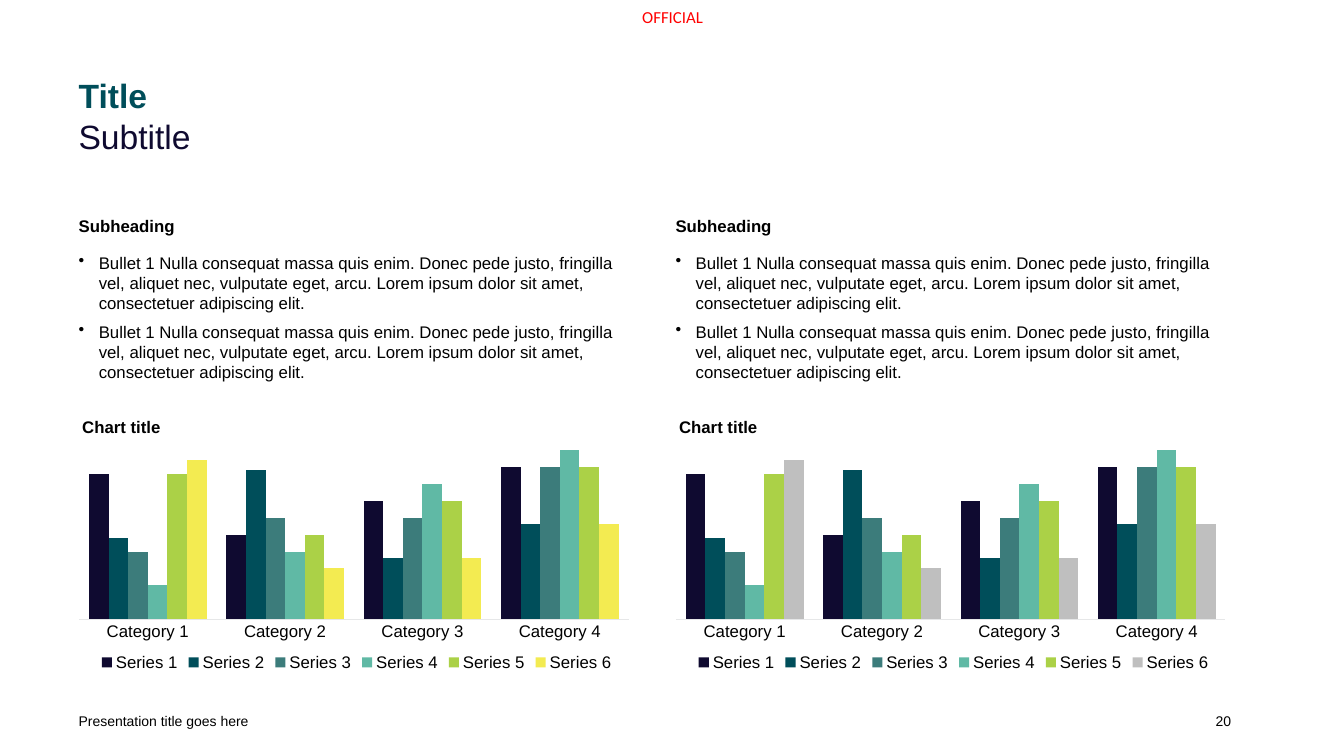
import dataclasses

import lxml.etree
import pptx
import pptx.chart.data
import pptx.dml.color
import pptx.enum.chart
import pptx.enum.text
import pptx.oxml.ns
import pptx.util

Inches = pptx.util.Inches
Pt = pptx.util.Pt
Align = pptx.enum.text.PP_ALIGN
Anchor = pptx.enum.text.MSO_ANCHOR


@dataclasses.dataclass(frozen=True)
class Theme:
    font: str = "Arial"
    marking_font: str = "Calibri"
    ink: str = "000000"
    marking: str = "FF0000"
    teal: str = "004E5A"
    navy: str = "0F0A30"
    axis: str = "E6E7E8"
    yellow: str = "F3EB51"
    grey: str = "BFBFBF"
    series: tuple[str, ...] = ("0F0A30", "004E5A", "3C7C7B", "60B9A5", "ABD147")
    heading_size: int = 24
    body_size: int = 12
    footer_size: int = 10


THEME = Theme()


@dataclasses.dataclass(frozen=True)
class Area:
    left: float
    top: float
    width: float
    height: float


@dataclasses.dataclass(frozen=True)
class Label:
    text: str
    area: Area
    size: int
    color: str = THEME.ink
    font: str = THEME.font
    anchor: Anchor = Anchor.TOP
    align: Align = Align.LEFT


@dataclasses.dataclass(frozen=True)
class Column:
    left: float
    last_color: str


MARGIN = 0.78
COLUMN_WIDTH = 5.51
COLUMNS = (Column(MARGIN, THEME.yellow), Column(6.7, THEME.grey))
LABELS = (
    Label("OFFICIAL", Area(6.37, 0.07, 0.64, 0.2), THEME.body_size,
          THEME.marking, THEME.marking_font),
    Label("Subtitle", Area(MARGIN, 1.15, 11.43, 0.35), THEME.heading_size, THEME.navy),
    Label("Presentation title goes here", Area(MARGIN, 6.95, 4.5, 0.4),
          THEME.footer_size, anchor=Anchor.MIDDLE),
    Label("20", Area(9.21, 6.95, 3, 0.4), THEME.footer_size,
          anchor=Anchor.MIDDLE, align=Align.RIGHT),
)
BULLET = (
    "Bullet 1 Nulla consequat massa quis enim. Donec pede justo, fringilla vel, "
    "aliquet nec, vulputate eget, arcu. Lorem ipsum dolor sit amet, "
    "consectetuer adipiscing elit."
)
VALUES = (
    (86, 50, 70, 90),
    (48, 88, 36, 56),
    (40, 60, 60, 90),
    (20, 40, 80, 100),
    (86, 50, 70, 90),
    (94, 30, 36, 56),
)


def rgb(color: str) -> pptx.dml.color.RGBColor:
    return pptx.dml.color.RGBColor.from_string(color)


def style_font(font, size: int, color: str = THEME.ink, bold: bool = False,
               name: str = THEME.font) -> None:
    font.name = name
    font.size = Pt(size)
    font.bold = bold
    font.color.rgb = rgb(color)


def prepare_frame(frame, anchor: Anchor = Anchor.TOP) -> None:
    """Wrap the text inside a frame without insets."""
    frame.word_wrap = True
    frame.auto_size = pptx.enum.text.MSO_AUTO_SIZE.NONE
    frame.vertical_anchor = anchor
    frame.margin_left = frame.margin_right = 0
    frame.margin_top = frame.margin_bottom = 0


def place(area: Area) -> tuple:
    return Inches(area.left), Inches(area.top), Inches(area.width), Inches(area.height)


def add_title(page) -> None:
    title = page.shapes.title
    title.left, title.top, title.width, title.height = place(
        Area(MARGIN, 0.79, 11.45, 0.35))
    prepare_frame(title.text_frame)
    title.text_frame.text = "Title"
    para = title.text_frame.paragraphs[0]
    para.alignment = Align.LEFT
    para.line_spacing = 0.9
    style_font(para.runs[0].font, THEME.heading_size, THEME.teal, True)


def add_label(page, label: Label) -> None:
    box = page.shapes.add_textbox(*place(label.area))
    prepare_frame(box.text_frame, label.anchor)
    box.text_frame.text = label.text
    para = box.text_frame.paragraphs[0]
    para.alignment = label.align
    style_font(para.runs[0].font, label.size, label.color, name=label.font)


def add_bullet_mark(para) -> None:
    properties = para._p.get_or_add_pPr()
    properties.set("marL", str(Inches(0.2)))
    properties.set("indent", str(-Inches(0.2)))
    mark = lxml.etree.SubElement(properties, pptx.oxml.ns.qn("a:buChar"))
    mark.set("char", "•")


def add_body(page, left: float) -> None:
    box = page.shapes.add_textbox(*place(Area(left, 2.14, COLUMN_WIDTH, 2.09)))
    frame = box.text_frame
    prepare_frame(frame)
    frame.text = "\n".join(("Subheading", BULLET, BULLET))
    for index, para in enumerate(frame.paragraphs):
        is_heading = index == 0
        para.space_after = Pt(12 if is_heading else 6)
        if not is_heading:
            add_bullet_mark(para)
        style_font(para.runs[0].font, THEME.body_size, bold=is_heading)


def set_layout(parent, **settings: object) -> None:
    """Give a chart part a manual layout in fractions of the chart."""
    qn = pptx.oxml.ns.qn
    layout = parent.find(qn("c:layout"))
    if layout is None:
        layout = lxml.etree.Element(qn("c:layout"))
        parent.insert(0, layout)
    manual = lxml.etree.SubElement(layout, qn("c:manualLayout"))
    for name, value in settings.items():
        lxml.etree.SubElement(manual, qn(f"c:{name}")).set("val", str(value))


def add_column_chart(page, column: Column) -> None:
    data = pptx.chart.data.CategoryChartData()
    data.categories = [f"Category {number}" for number in range(1, 5)]
    for number, values in enumerate(VALUES, 1):
        data.add_series(f"Series {number}", values)
    area = Area(column.left, 4.05, COLUMN_WIDTH, 2.65)
    chart = page.shapes.add_chart(
        pptx.enum.chart.XL_CHART_TYPE.COLUMN_CLUSTERED, *place(area), data).chart
    style_font(chart.font, THEME.body_size)

    title = chart.chart_title
    title.text_frame.text = "Chart title"
    style_font(title.text_frame.paragraphs[0].runs[0].font, THEME.body_size, bold=True)
    title.include_in_layout = False
    set_layout(chart.element.chart.find(pptx.oxml.ns.qn("c:title")),
               xMode="edge", yMode="edge", x=0, y=0.02)
    set_layout(chart.element.chart.plotArea, layoutTarget="inner",
               xMode="edge", yMode="edge", x=0, y=0.03, w=0.99, h=0.76)

    plot = chart.plots[0]
    plot.gap_width = 100
    plot.overlap = 0
    plot.vary_by_categories = False
    for series, color in zip(plot.series, (*THEME.series, column.last_color)):
        series.format.fill.solid()
        series.format.fill.fore_color.rgb = rgb(color)

    chart.value_axis.visible = False
    chart.value_axis.has_major_gridlines = False
    chart.value_axis.minimum_scale = 0
    chart.value_axis.maximum_scale = 120
    axis = chart.category_axis
    axis.major_tick_mark = pptx.enum.chart.XL_TICK_MARK.NONE
    axis.format.line.color.rgb = rgb(THEME.axis)
    axis.format.line.width = Pt(0.75)
    style_font(axis.tick_labels.font, THEME.body_size)

    chart.has_legend = True
    chart.legend.position = pptx.enum.chart.XL_LEGEND_POSITION.BOTTOM
    chart.legend.include_in_layout = False
    style_font(chart.legend.font, THEME.body_size)


def main() -> None:
    deck = pptx.Presentation()
    deck.slide_width, deck.slide_height = Inches(13.33), Inches(7.5)
    page = deck.slides.add_slide(deck.slide_layouts.get_by_name("Title Only"))
    add_title(page)
    for column in COLUMNS:
        add_body(page, column.left)
        add_column_chart(page, column)
    for label in LABELS:
        add_label(page, label)
    deck.save("out.pptx")


if __name__ == "__main__":
    main()
